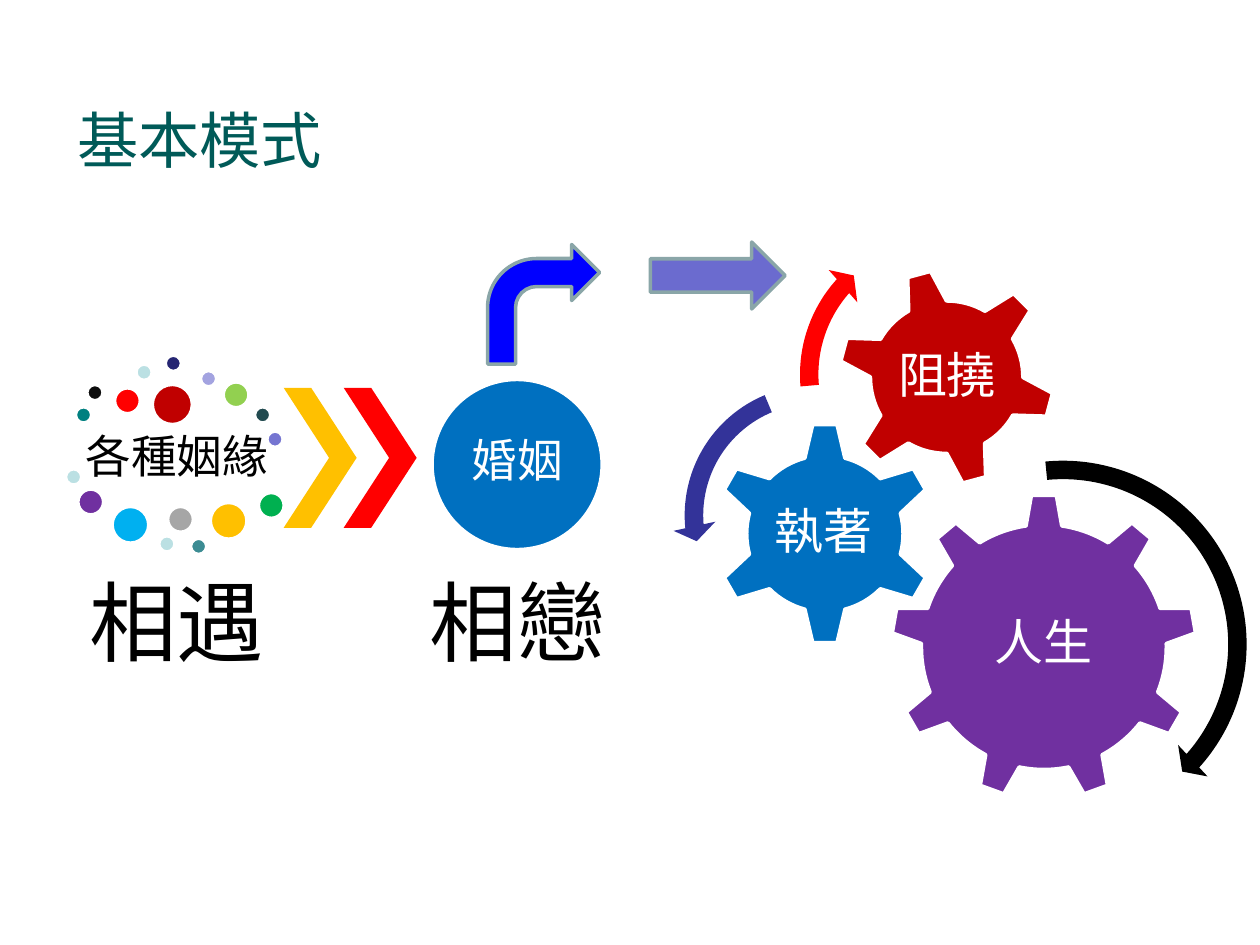
"""Build the slide on the basic pattern of meeting, love and life."""
from pptx import Presentation
from pptx.dml.color import RGBColor
from pptx.enum.shapes import MSO_SHAPE as Shape
from pptx.enum.text import MSO_ANCHOR as Anchor, MSO_AUTO_SIZE as AutoSize, PP_ALIGN as Align
from pptx.util import Cm, Pt

WHITE = RGBColor(0xFF, 0xFF, 0xFF)
BLACK = RGBColor(0x00, 0x00, 0x00)
INK = RGBColor(0x0D, 0x0D, 0x0D)
GRAY = RGBColor(0xA6, 0xA6, 0xA6)
STEEL = RGBColor(0x8A, 0xA6, 0xA8)
RED = RGBColor(0xFF, 0x00, 0x00)
CRIMSON = RGBColor(0xC0, 0x00, 0x00)
GOLD = RGBColor(0xFF, 0xC0, 0x00)
LIME = RGBColor(0x92, 0xD0, 0x50)
GREEN = RGBColor(0x00, 0xB0, 0x50)
DEEP_GREEN = RGBColor(0x00, 0x5A, 0x58)
TEAL = RGBColor(0x00, 0x80, 0x80)
DARK_TEAL = RGBColor(0x22, 0x4B, 0x50)
MID_TEAL = RGBColor(0x3C, 0x8C, 0x93)
PALE_TEAL = RGBColor(0xBB, 0xE0, 0xE3)
SKY = RGBColor(0x00, 0xB0, 0xF0)
BLUE = RGBColor(0x00, 0x70, 0xC0)
PURE_BLUE = RGBColor(0x00, 0x00, 0xFF)
NAVY = RGBColor(0x26, 0x26, 0x73)
INDIGO = RGBColor(0x33, 0x33, 0x99)
PERIWINKLE = RGBColor(0x6B, 0x6B, 0xCF)
LAVENDER = RGBColor(0x75, 0x75, 0xD1)
PALE_LAVENDER = RGBColor(0xA3, 0xA3, 0xE0)
PURPLE = RGBColor(0x70, 0x30, 0xA0)

FONT = "Arial"
TITLE = "基本模式"
SMALL, MEDIUM, LARGE, LARGEST = 0.33, 0.52, 0.74, 0.81

DOTS = [
    (1.52, 8.2, SMALL, TEAL),
    (1.75, 7.75, SMALL, INK),
    (2.31, 7.82, MEDIUM, RED),
    (2.74, 7.34, SMALL, PALE_TEAL),
    (3.33, 7.16, SMALL, NAVY),
    (4.04, 7.47, SMALL, PALE_LAVENDER),
    (4.5, 7.7, MEDIUM, LIME),
    (5.13, 8.2, SMALL, DARK_TEAL),
    (5.38, 8.69, SMALL, LAVENDER),
    (3.07, 7.75, LARGEST, CRIMSON),
    (1.32, 9.45, SMALL, PALE_TEAL),
    (1.57, 9.86, MEDIUM, PURPLE),
    (2.26, 10.21, LARGE, SKY),
    (3.2, 10.8, SMALL, PALE_TEAL),
    (3.38, 10.21, MEDIUM, GRAY),
    (3.84, 10.85, SMALL, MID_TEAL),
    (4.24, 10.13, LARGE, GOLD),
    (5.21, 9.93, MEDIUM, GREEN),
]
CHEVRONS = [(5.72, GOLD), (6.93, RED)]
LABELS = [
    ("各種姻緣", (1.55, 8.59, 4.04, 1.32), 26, BLACK, 0.1),
    ("相遇", (1.55, 11.4, 4.04, 2.49), 50, BLACK, 0.18),
    ("婚姻", (9.22, 8.13, 2.41, 2.41), 26, WHITE, 0),
    ("相戀", (8.41, 11.4, 4.04, 2.49), 50, BLACK, 0.18),
]
GEARS = [
    ("人生", Shape.GEAR_9, (17.96, 9.96, 6.17), PURPLE, 0, (19.2, 11.4, 3.68, 3.18)),
    ("執著", Shape.GEAR_6, (14.38, 8.51, 4.5), BLUE, 0, (15.49, 9.65, 2.24, 2.21)),
    ("阻撓", Shape.GEAR_6, (16.89, 5.41, 4.39), CRIMSON, 345, (17.86, 6.38, 2.46, 2.46)),
]
TURNS = [
    (Shape.CIRCULAR_ARROW, (17.48, 9.04, 7.9), BLACK,
     (0.047, 2.99, 25.124, 158.693, 0.055)),
    (Shape.LEFT_CIRCULAR_ARROW, (13.56, 7.52, 5.74), INDIGO,
     (0.065, 4.3, 104.891, 148.378, 0.075)),
    (Shape.CIRCULAR_ARROW, (15.88, 4.45, 6.2), RED,
     (0.06, 3.941, 133.138, 105.082, 0.07)),
]
ARROWS = [
    (Shape.RIGHT_ARROW, (13.11, 4.88, 2.72, 1.35), PERIWINKLE),
    (Shape.BENT_ARROW, (9.83, 4.93, 2.26, 2.41), PURE_BLUE),
]


def apply_format(target, values):
    for name, value in values.items():
        setattr(target, name, value)


def write_text(shape, text, size, color, align):
    paragraph = shape.text_frame.paragraphs[0]
    paragraph.alignment = align
    run = paragraph.add_run()
    run.text = text
    apply_format(run.font, {"name": FONT, "size": Pt(size)})
    run.font.color.rgb = color
    return paragraph


def add_label(slide, text, box, size, color, inset):
    label = slide.shapes.add_textbox(*map(Cm, box))
    margins = dict.fromkeys(
        ("margin_left", "margin_top", "margin_right", "margin_bottom"), Cm(inset))
    apply_format(label.text_frame,
                 {"word_wrap": True, "vertical_anchor": Anchor.MIDDLE, **margins})
    write_text(label, text, size, color, Align.CENTER).line_spacing = 0.9


def add_figure(slide, kind, box, fill, line=None, adjustments=(), rotation=0):
    left, top, width = box[:3]
    figure = slide.shapes.add_shape(kind, *map(Cm, (left, top, width, box[-1])))
    figure.shadow.inherit = False
    figure.rotation = rotation
    figure.fill.solid()
    figure.fill.fore_color.rgb = fill
    if line is None:
        figure.line.fill.background()
    else:
        figure.line.color.rgb = line
        figure.line.width = Pt(2)
    for index, value in enumerate(adjustments):
        figure.adjustments[index] = value


def add_title(slide):
    title = slide.shapes.title
    apply_format(title, {"left": Cm(1.3), "top": Cm(1.93),
                         "width": Cm(22.86), "height": Cm(1.75)})
    apply_format(title.text_frame, {"vertical_anchor": Anchor.MIDDLE,
                                    "auto_size": AutoSize.NONE})
    write_text(title, TITLE, 35, DEEP_GREEN, Align.LEFT)


def main():
    presentation = Presentation()
    apply_format(presentation, {"slide_width": Cm(25.4), "slide_height": Cm(19.05)})
    slide = presentation.slides.add_slide(presentation.slide_layouts[5])
    add_title(slide)
    for left, top, size, color in DOTS:
        add_figure(slide, Shape.OVAL, (left, top, size), color, WHITE)
    for left, color in CHEVRONS:
        add_figure(slide, Shape.CHEVRON, (left, 7.82, 1.47, 2.82), color,
                   adjustments=[0.623])
    add_figure(slide, Shape.OVAL, (8.71, 7.65, 3.43), BLUE, WHITE)
    for label in LABELS:
        add_label(slide, *label)
    for text, kind, box, color, rotation, text_box in GEARS:
        add_figure(slide, kind, box, color, WHITE, rotation=rotation)
        add_label(slide, text, text_box, 28, WHITE, 0.1)
    for kind, box, color, adjustments in TURNS:
        add_figure(slide, kind, box, color, adjustments=adjustments)
    for kind, box, color in ARROWS:
        add_figure(slide, kind, box, color, STEEL)
    presentation.save("out.pptx")


if __name__ == "__main__":
    main()
